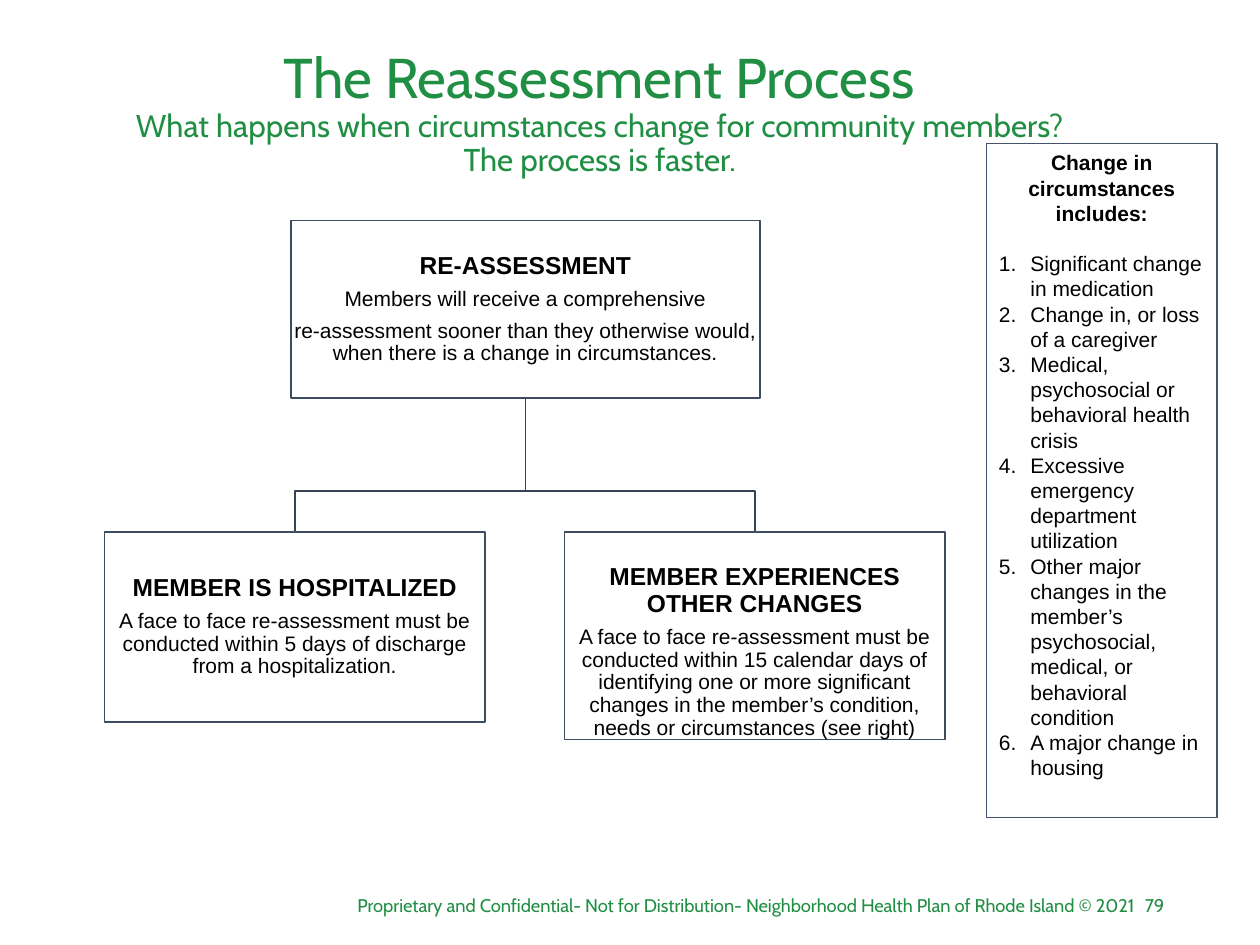
"""Builds the reassessment process slide with its flow chart and sidebar."""
from lxml import etree
from pptx import Presentation
from pptx.dml.color import RGBColor
from pptx.enum import shapes, text
from pptx.oxml.ns import qn
from pptx.util import Inches, Pt

COLORS = {"green": "208F44", "black": "000000", "white": "FFFFFF",
          "card": "3E4C60", "branch": "364355", "sidebar": "44546A"}
CENTER, RIGHT, LEFT = text.PP_ALIGN.CENTER, text.PP_ALIGN.RIGHT, text.PP_ALIGN.LEFT
HEADING = {"name": "Arial", "size": Pt(14), "bold": True}
BODY = {"name": "Arial", "size": Pt(12), "bold": False}


def style(font, color, formats):
    for key, value in formats.items():
        setattr(font, key, value)
    font.color.rgb = RGBColor.from_string(COLORS[color])


def outlined_box(left, top, width, height, line, points):
    box = slide.shapes.add_shape(shapes.MSO_SHAPE.RECTANGLE, Inches(left), Inches(top),
                                 Inches(width), Inches(height))
    box.shadow.inherit = False
    box.fill.solid()
    box.fill.fore_color.rgb = RGBColor.from_string(COLORS["white"])
    box.line.color.rgb = RGBColor.from_string(COLORS[line])
    box.line.width = Pt(points)
    box.text_frame.word_wrap = True
    return box


prs = Presentation()
prs.slide_width, prs.slide_height = Inches(10), Inches(7.5)
slide = prs.slides.add_slide(prs.slide_layouts[6])

footers = [
    (8.88, 0.46, "79"),
    (2.5, 6.61, "Proprietary and Confidential- Not for Distribution- "
                "Neighborhood Health Plan of Rhode Island © 2021"),
]
for left, width, wording in footers:
    footer = slide.shapes.add_textbox(Inches(left), Inches(7.05), Inches(width), Inches(0.28))
    footer.text_frame.word_wrap = True
    line = footer.text_frame.paragraphs[0]
    line.text, line.alignment = wording, RIGHT
    style(line.runs[0].font, "green", {"name": "Cabin", "size": Pt(10.5)})

title = slide.shapes.add_textbox(Inches(0.26), Inches(0.28), Inches(9), Inches(1.25))
title.text_frame.word_wrap = True
title.text_frame.vertical_anchor = text.MSO_ANCHOR.MIDDLE
headline = title.text_frame.paragraphs[0]
headline.alignment, headline.line_spacing = CENTER, 0.9
title_lines = [
    ("The Reassessment Process", 32),
    ("What happens when circumstances change for community members?", 18),
    ("The process is faster.", 18),
]
for index, (wording, size) in enumerate(title_lines):
    if index:
        headline.add_line_break()
    run = headline.add_run()
    run.text = wording
    style(run.font, "green", {"name": "Cabin", "size": Pt(size)})

trunk_x, trunk_top, fork_y, branch_end = 4.17, 3.16, 3.9, 4.22
for branch_x in (5.99, 2.34):
    builder = slide.shapes.build_freeform(Inches(trunk_x), Inches(trunk_top))
    builder.add_line_segments([(Inches(x), Inches(y)) for x, y in (
        (trunk_x, fork_y), (branch_x, fork_y), (branch_x, branch_end))], close=False)
    branch = builder.convert_to_shape()
    branch.shadow.inherit = False
    branch.fill.background()
    branch.line.color.rgb = RGBColor.from_string(COLORS["branch"])
    branch.line.width = Pt(1)

cards = [
    (2.31, 1.75, 3.72, 1.41, text.MSO_ANCHOR.MIDDLE, 0.01, [
        "RE-ASSESSMENT",
        "Members will receive a comprehensive",
        "re-assessment sooner than they otherwise would, "
        "when there is a change in circumstances."]),
    (0.83, branch_end, 3.02, 1.51, text.MSO_ANCHOR.MIDDLE, 0.01, [
        "MEMBER IS HOSPITALIZED",
        "A face to face re-assessment must be conducted within 5 days "
        "of discharge from a hospitalization."]),
    (4.48, branch_end, 3.02, 1.65, text.MSO_ANCHOR.TOP, 0.26, [
        "MEMBER EXPERIENCES OTHER CHANGES",
        "A face to face re-assessment must be conducted within 15 calendar days "
        "of identifying one or more significant changes in the member’s condition, "
        "needs or circumstances (see right)"]),
]
for left, top, width, height, anchor, top_inset, wordings in cards:
    frame = outlined_box(left, top, width, height, "card", 1).text_frame
    frame.vertical_anchor = anchor
    frame.margin_left = frame.margin_right = frame.margin_bottom = Inches(0.01)
    frame.margin_top = Inches(top_inset)
    for index, wording in enumerate(wordings):
        paragraph = frame.add_paragraph() if index else frame.paragraphs[0]
        paragraph.text, paragraph.alignment = wording, CENTER
        paragraph.line_spacing, paragraph.space_after = 0.9, Pt(5)
        style(paragraph.runs[0].font, "black", BODY if index else HEADING)

sidebar = outlined_box(7.83, 1.14, 1.83, 5.35, "sidebar", 0.75).text_frame
sidebar.vertical_anchor = text.MSO_ANCHOR.TOP
sidebar_heading = sidebar.paragraphs[0]
sidebar_heading.text, sidebar_heading.alignment = "Change in circumstances includes:", CENTER
sidebar_heading.space_after = Pt(14.4)
style(sidebar_heading.runs[0].font, "black", {**BODY, "bold": True})
circumstances = [
    "Significant change in medication",
    "Change in, or loss of a caregiver",
    "Medical, psychosocial or behavioral health crisis",
    "Excessive emergency department utilization",
    "Other major changes in the member’s psychosocial, medical, or behavioral condition",
    "A major change in housing",
]
for wording in circumstances:
    item = sidebar.add_paragraph()
    item.text, item.alignment = wording, LEFT
    properties = item._p.get_or_add_pPr()
    properties.set("marL", str(Inches(0.25)))
    properties.set("indent", str(-Inches(0.25)))
    etree.SubElement(properties, qn("a:buFont"), typeface="+mj-lt")
    etree.SubElement(properties, qn("a:buAutoNum"), type="arabicPeriod")
    style(item.runs[0].font, "black", BODY)

prs.save("out.pptx")
